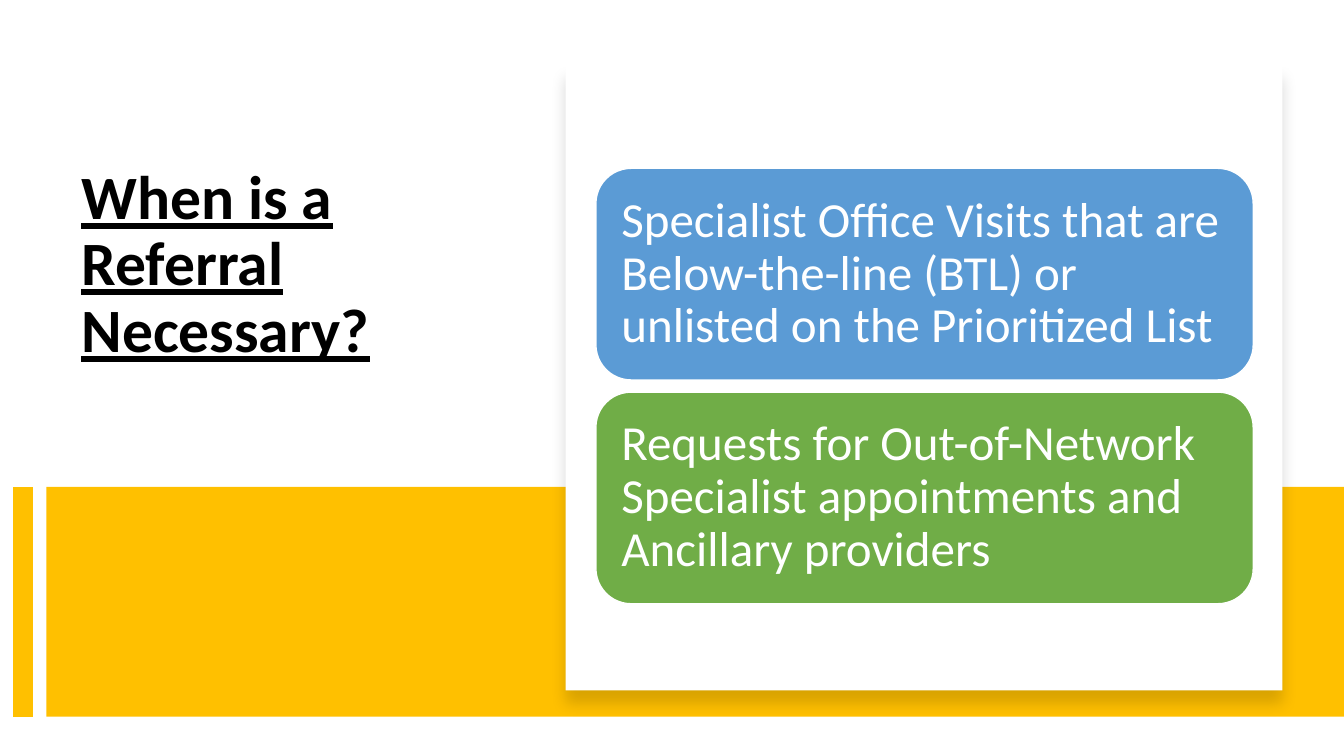
from typing import NamedTuple

from lxml import etree
from pptx import Presentation
from pptx.dml.color import RGBColor
from pptx.enum.shapes import MSO_CONNECTOR, MSO_SHAPE
from pptx.enum.text import MSO_ANCHOR, PP_ALIGN
from pptx.oxml.ns import qn
from pptx.shapes.autoshape import Shape
from pptx.slide import Slide
from pptx.util import Inches, Pt

RECTANGLE = MSO_SHAPE.RECTANGLE
ROUNDED = MSO_SHAPE.ROUNDED_RECTANGLE
STRAIGHT = MSO_CONNECTOR.STRAIGHT
TOP, MIDDLE = MSO_ANCHOR.TOP, MSO_ANCHOR.MIDDLE
LEFT = PP_ALIGN.LEFT

COLORS = {
    "amber": "FFC000",
    "blue": "5B9BD5",
    "green": "70AD47",
    "white": "FFFFFF",
    "black": "000000",
}
FONT = "Calibri"
SLIDE_WIDTH, SLIDE_HEIGHT = 13.33, 7.5
BAND_TOP, BAND_HEIGHT = 4.83, 2.28
REASON_TOP, REASON_STEP = 1.67, 2.22


class Area(NamedTuple):
    left: float
    top: float
    width: float
    height: float


class Reason(NamedTuple):
    text: str
    color: str


REASONS = [
    Reason("Specialist Office Visits that are Below-the-line (BTL) or "
           "unlisted on the Prioritized List", "blue"),
    Reason("Requests for Out-of-Network Specialist appointments and "
           "Ancillary providers", "green"),
]


def rgb(name: str) -> RGBColor:
    return RGBColor.from_string(COLORS[name])


def add_block(slide: Slide, kind: MSO_SHAPE, area: Area, color: str) -> Shape:
    """Add a filled shape without outline or shadow."""
    block = slide.shapes.add_shape(kind, *map(Inches, area))
    block.shadow.inherit = False
    block.fill.solid()
    block.fill.fore_color.rgb = rgb(color)
    block.line.fill.background()
    return block


def write_text(box: Shape, text: str, size: float, color: str,
               anchor: MSO_ANCHOR, heading: bool = False) -> None:
    frame = box.text_frame
    frame.word_wrap = True
    frame.vertical_anchor = anchor
    frame.text = text
    para = frame.paragraphs[0]
    para.alignment = LEFT
    para.line_spacing = 0.9
    for span in para.runs:
        span.font.name = FONT
        span.font.size = Pt(size)
        span.font.color.rgb = rgb(color)
        span.font.bold = heading
        span.font.underline = heading


def add_soft_shadow(shape: Shape) -> None:
    effects = shape._element.spPr.find(qn("a:effectLst"))
    shadow = etree.SubElement(effects, qn("a:outerShdw"), blurRad=str(Pt(11)),
                              dist=str(Pt(10)), dir="5400000", algn="t",
                              rotWithShape="0")
    color = etree.SubElement(shadow, qn("a:srgbClr"), val=COLORS["black"])
    etree.SubElement(color, qn("a:alpha"), val="15000")


def add_title(slide: Slide) -> None:
    box = slide.shapes.add_textbox(*map(Inches, Area(0.71, 1.6, 4.15, 2.94)))
    write_text(box, "When is a Referral Necessary?", 44, "black", TOP, heading=True)


def add_band(slide: Slide) -> None:
    """Add the amber band and the thick stripe to its left."""
    add_block(slide, RECTANGLE, Area(0.46, BAND_TOP, 12.87, BAND_HEIGHT), "amber")
    stripe = slide.shapes.add_connector(
        STRAIGHT, Inches(0.23), Inches(BAND_TOP),
        Inches(0.23), Inches(BAND_TOP + BAND_HEIGHT))
    stripe.line.color.rgb = rgb("amber")
    stripe.line.width = Pt(14)
    etree.SubElement(stripe._element.spPr, qn("a:effectLst"))


def add_reason(slide: Slide, reason: Reason, top: float) -> None:
    box = add_block(slide, ROUNDED, Area(5.91, top, 6.52, 2.1), reason.color)
    box.line.color.rgb = rgb("white")
    box.line.width = Pt(1)
    frame = box.text_frame
    frame.margin_left = frame.margin_right = Inches(0.15)
    frame.margin_top = frame.margin_bottom = Inches(0.15)
    write_text(box, reason.text, 35, "white", MIDDLE)


def main() -> None:
    deck = Presentation()
    deck.slide_width = Inches(SLIDE_WIDTH)
    deck.slide_height = Inches(SLIDE_HEIGHT)
    page = deck.slides.add_slide(deck.slide_layouts[6])
    add_title(page)
    add_band(page)
    card = add_block(page, RECTANGLE, Area(5.61, 0.64, 7.11, 6.21), "white")
    add_soft_shadow(card)
    for index, reason in enumerate(REASONS):
        add_reason(page, reason, REASON_TOP + index * REASON_STEP)
    deck.save("out.pptx")


if __name__ == "__main__":
    main()
